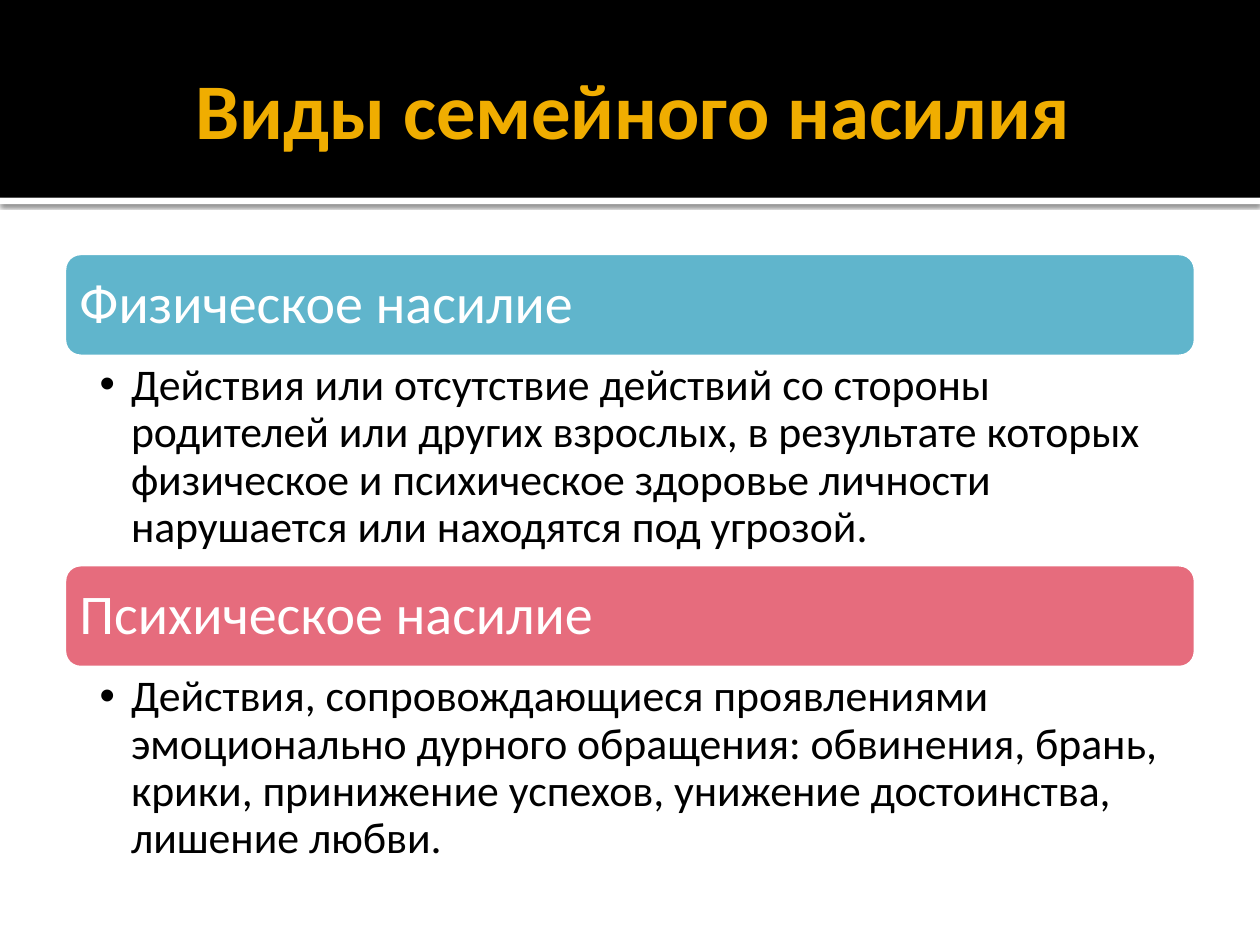
"""Build a slide that defines two kinds of family violence."""
from lxml import etree
from pptx import Presentation, util as u
from pptx.dml.color import RGBColor
from pptx.enum import shapes, text
from pptx.oxml import parse_xml
from pptx.oxml.ns import nsdecls, qn

TITLE = "Виды семейного насилия"
KINDS = [
    ("Физическое насилие", "60B5CC",
     "Действия или отсутствие действий со стороны родителей или других взрослых, "
     "в результате которых физическое и психическое здоровье личности "
     "нарушается или находятся под угрозой."),
    ("Психическое насилие", "E66C7D",
     "Действия, сопровождающиеся проявлениями эмоционально дурного обращения: "
     "обвинения, брань, крики, принижение успехов, унижение достоинства, "
     "лишение любви."),
]
LEFT, TOP, WIDTH = 0.5, 2, 9
HEADING_HEIGHT, DETAIL_HEIGHT = 0.84, 1.63
BAND_HEIGHT, RULE_HEIGHT = 1.57, 0.05
SHADOW = (
    f'<a:effectLst {nsdecls("a")}><a:outerShdw blurRad="31750" dist="10160" '
    'dir="5400000" algn="tl" rotWithShape="0"><a:srgbClr val="000000">'
    '<a:alpha val="60000"/></a:srgbClr></a:outerShdw></a:effectLst>'
)


def color(value):
    return RGBColor.from_string(value)


def place(item, *bounds):
    item.left, item.top, item.width, item.height = map(u.Inches, bounds)


def add_block(slide, kind, bounds, fill):
    block = slide.shapes.add_shape(kind, *map(u.Inches, bounds))
    block.shadow.inherit = False
    block.fill.solid()
    block.fill.fore_color.rgb = color(fill)
    block.line.fill.background()
    return block


def write(item, words, size, ink, insets, anchor, align=text.PP_ALIGN.LEFT, bold=False):
    frame = item.text_frame
    frame.word_wrap = True
    frame.auto_size = text.MSO_AUTO_SIZE.NONE
    frame.vertical_anchor = anchor
    (frame.margin_left, frame.margin_top,
     frame.margin_right, frame.margin_bottom) = map(u.Inches, insets)
    para = frame.paragraphs[0]
    para.text = words
    para.alignment = align
    para.font.name, para.font.size, para.font.bold = "Calibri", u.Pt(size), bold
    para.font.color.rgb = color(ink)
    return para


def add_bullet(para, indent):
    para.level = 1
    properties = para._p.get_or_add_pPr()
    properties.set("marL", str(u.Inches(indent)))
    properties.set("indent", str(-u.Inches(indent)))
    etree.SubElement(properties, qn("a:buFont")).set("typeface", "Arial")
    etree.SubElement(properties, qn("a:buChar")).set("char", "•")
    properties.append(properties.find(qn("a:defRPr")))


def add_header(slide):
    title = slide.shapes.title
    rectangle = shapes.MSO_SHAPE.RECTANGLE
    rule = add_block(slide, rectangle, (0, BAND_HEIGHT, 10, RULE_HEIGHT), "FFFFFF")
    properties = rule.element.spPr
    properties.replace(properties.find(qn("a:effectLst")), parse_xml(SHADOW))
    band = add_block(slide, rectangle, (0, 0, 10, BAND_HEIGHT), "000000")
    for block in (rule, band):
        title.element.addprevious(block.element)
    place(title, LEFT, 0.17, WIDTH, 1.37)
    write(title, TITLE, 45, "F0AD00", (0.1, 0.05, 0.05, 0.05),
          text.MSO_ANCHOR.MIDDLE, text.PP_ALIGN.CENTER, True)


def add_kind(slide, top, heading, fill, detail):
    bar = add_block(slide, shapes.MSO_SHAPE.ROUNDED_RECTANGLE,
                    (LEFT, top, WIDTH, HEADING_HEIGHT), fill)
    bar.line.color.rgb = color("FFFFFF")
    bar.line.width = u.Pt(3.78)
    para = write(bar, heading, 32, "FFFFFF", (0.09,) * 4, text.MSO_ANCHOR.MIDDLE)
    para.line_spacing = 0.9

    bounds = (LEFT, top + HEADING_HEIGHT, WIDTH, DETAIL_HEIGHT)
    box = slide.shapes.add_textbox(*map(u.Inches, bounds))
    para = write(box, detail, 25, "000000", (0.29, 0.04, 0.25, 0.04), text.MSO_ANCHOR.TOP)
    para.line_spacing = 0.9
    add_bullet(para, 0.25)


def main():
    deck = Presentation()
    deck.slide_width, deck.slide_height = u.Inches(10), u.Inches(7.5)
    slide = deck.slides.add_slide(deck.slide_layouts.get_by_name("Title Only"))
    add_header(slide)
    for index, kind in enumerate(KINDS):
        add_kind(slide, TOP + index * (HEADING_HEIGHT + DETAIL_HEIGHT), *kind)
    deck.save("out.pptx")


if __name__ == "__main__":
    main()
